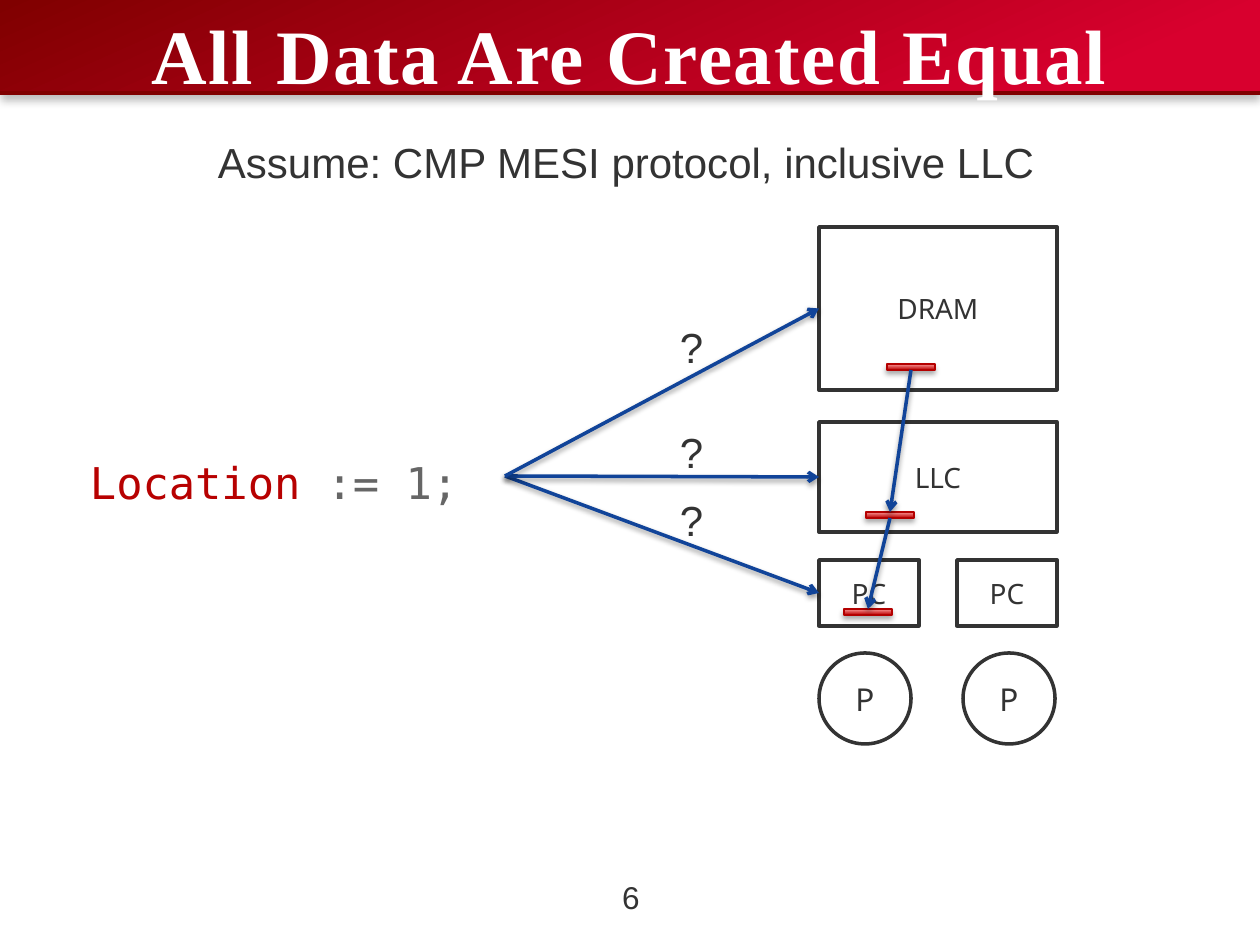
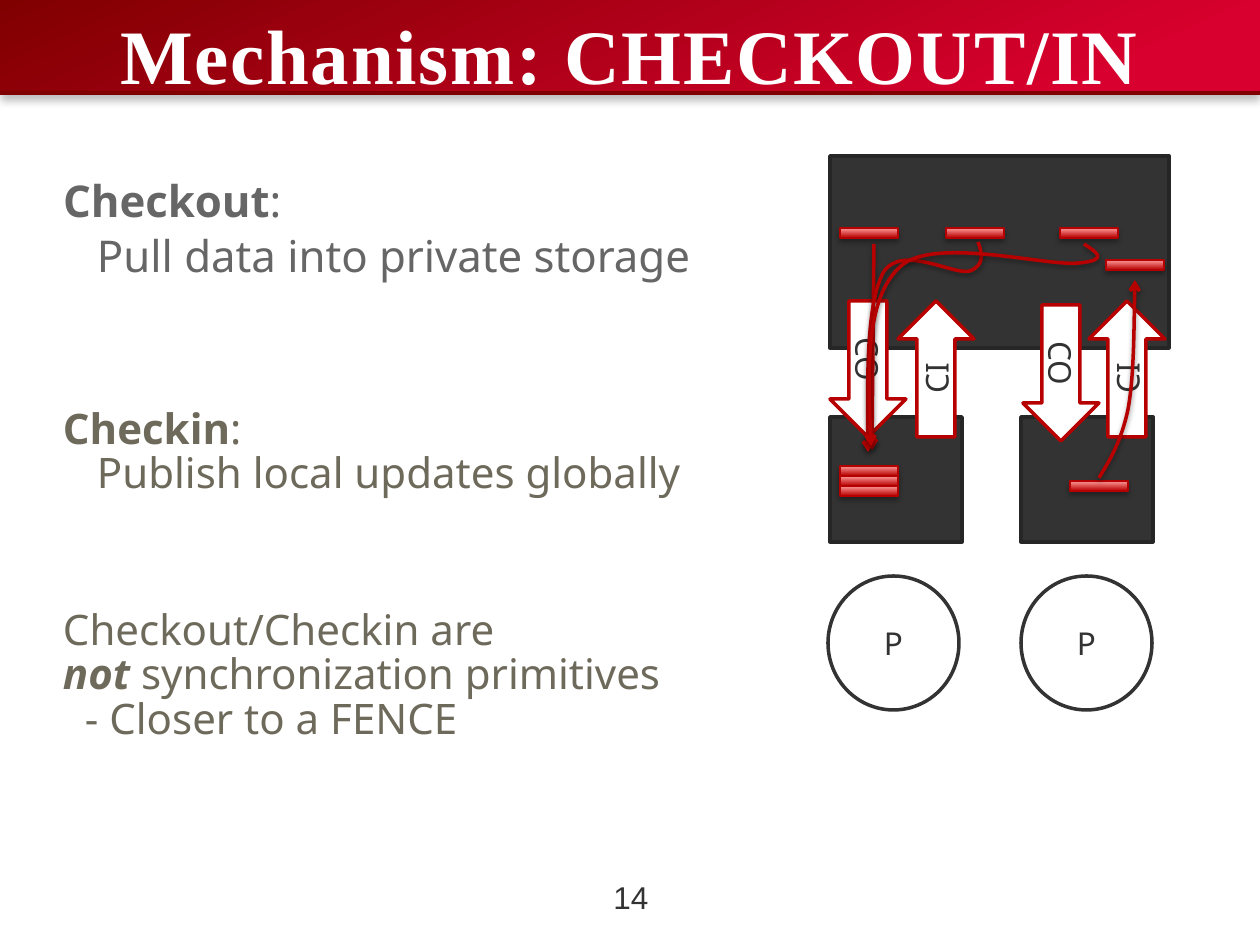
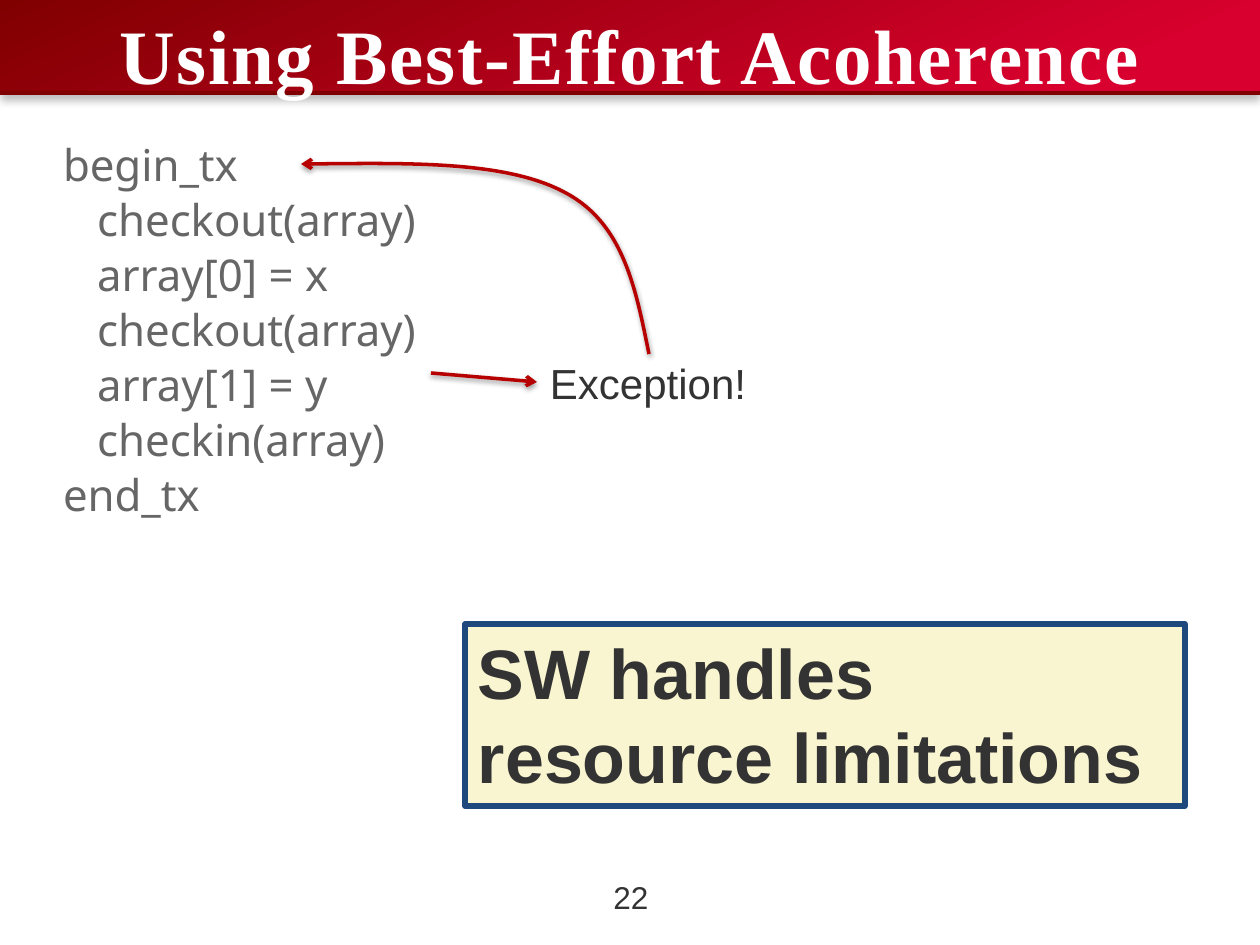
from pptx import Presentation
from pptx import util as u
from pptx.dml.color import RGBColor
from pptx.enum import shapes, text
from pptx.oxml.ns import qn
from lxml import etree

# Colours
WHITE = RGBColor(0xFF, 0xFF, 0xFF)
INK = RGBColor(0x33, 0x33, 0x33)
DARK_EDGE = RGBColor(0x26, 0x26, 0x26)
GREY = RGBColor(0x66, 0x66, 0x66)
OLIVE = RGBColor(0x6E, 0x6A, 0x5B)
RED = RGBColor(0xB7, 0x01, 0x01)
BLUE = RGBColor(0x11, 0x44, 0x99)
MAROON = RGBColor(0x80, 0x00, 0x00)
CRIMSON = RGBColor(0xD8, 0x00, 0x2E)
LINE_DARK = RGBColor(0xB8, 0x00, 0x00)
LINE_LIGHT = RGBColor(0xFF, 0x9C, 0x9C)
LINE_EDGE = RGBColor(0xB4, 0x00, 0x00)
CREAM = RGBColor(0xF9, 0xF5, 0xD0)
NAVY = RGBColor(0x1F, 0x49, 0x7D)

SANS, MONO, ARIAL, SERIF = "Noto Sans", "DejaVu Sans Mono", "Arial", "Times New Roman"
RECT, OVAL = shapes.MSO_SHAPE.RECTANGLE, shapes.MSO_SHAPE.OVAL
DOWN, UP = shapes.MSO_SHAPE.DOWN_ARROW, shapes.MSO_SHAPE.UP_ARROW
CENTER, LEFT = text.PP_ALIGN.CENTER, text.PP_ALIGN.LEFT
TOP, MIDDLE = text.MSO_ANCHOR.TOP, text.MSO_ANCHOR.MIDDLE
SIDE_TOP, SIDE_LEFT, SIDE_BOTTOM = 0, 1, 2

PX_PER_INCH = 126
PAGE_WIDTH, PAGE_HEIGHT = 1260, 945
BAND_HEIGHT = 93
TIGHT = 0.88  # line spacing of the sans text


def px(length):
    return u.Emu(round(length * 914400 / PX_PER_INCH))


def place(box, left, top, width, height):
    box.left, box.top, box.width, box.height = map(px, (left, top, width, height))


class SlideMaker:
    """Holds the deck's style and the current slide."""

    def __init__(self):
        self.deck = Presentation()
        self.deck.slide_width, self.deck.slide_height = px(PAGE_WIDTH), px(PAGE_HEIGHT)
        self.page = None

    def start(self, title, number):
        self.page = self.deck.slides.add_slide(self.deck.slide_layouts[1])
        # Band with its lower rule, behind the title
        band = self.shape(RECT, 0, 0, PAGE_WIDTH, BAND_HEIGHT, None, None)
        self.gradient(band, 294, (0, MAROON), (0.87, CRIMSON))
        self.shadow(band, 25, 5, 3.8)
        self.line((0, BAND_HEIGHT), (PAGE_WIDTH, BAND_HEIGHT), MAROON, arrow=False)
        self.label(str(number), 581, 872, 100, 50, size=18, align=CENTER)
        # Title
        heading = self.page.shapes.title
        self.page.shapes._spTree.append(heading._element)
        place(heading, 0, 0, PAGE_WIDTH, 92)
        self.set_lines(heading.text_frame, [title], SERIF, 44, WHITE, CENTER, TOP,
                       insets=(13, 8, 13, 0), bold=True)
        for span in heading.text_frame.paragraphs[0].runs:
            span.font._element.set("spc", "100")

    def set_lines(self, frame, lines, font, size, color, align=LEFT, anchor=TOP,
                  insets=(13, 6, 13, 6), spacing=1.0, before=0, bold=False):
        """A line is a string, a list of (text, font settings) or (indent, line)."""
        frame.word_wrap = True
        frame.auto_size = text.MSO_AUTO_SIZE.NONE
        frame.vertical_anchor = anchor
        (frame.margin_left, frame.margin_top,
         frame.margin_right, frame.margin_bottom) = map(px, insets)
        for index, line in enumerate(lines):
            indent, content = line if isinstance(line, tuple) else (0, line)
            para = frame.add_paragraph() if index else frame.paragraphs[0]
            para.alignment = align
            para.line_spacing = spacing
            para.space_before = u.Pt(before if index else 0)
            properties = para._p.get_or_add_pPr()
            properties.set("marL", str(px(indent)))
            properties.set("indent", "0")
            etree.SubElement(properties, qn("a:buNone"))
            spans = [(content, {})] if isinstance(content, str) else content
            for words, settings in spans:
                span = para.add_run()
                span.text = words
                span.font.name, span.font.size = font, u.Pt(size)
                span.font.bold = settings.get("bold", bold)
                span.font.italic = settings.get("italic", False)
                span.font.color.rgb = settings.get("color", color)

    def body(self, lines, left, top, width, height, font=SANS, color=GREY, spacing=TIGHT):
        box = self.page.placeholders[1]
        place(box, left, top, width, height)
        self.set_lines(box.text_frame, lines, font, 25, color, spacing=spacing, before=5)

    def label(self, words, left, top, width, height, size=24, align=LEFT):
        self.paragraphs([words], left, top, width, height, ARIAL, size, INK, align)

    def paragraphs(self, lines, left, top, width, height, font=SANS, size=24,
                   color=OLIVE, align=LEFT, spacing=1.0):
        box = self.page.shapes.add_textbox(*map(px, (left, top, width, height)))
        self.set_lines(box.text_frame, lines, font, size, color, align, spacing=spacing)

    def shape(self, kind, left, top, width, height, fill=WHITE, edge=INK, weight=2):
        box = self.page.shapes.add_shape(kind, *map(px, (left, top, width, height)))
        box.shadow.inherit = False
        if fill is not None:
            box.fill.solid()
            box.fill.fore_color.rgb = fill
        if edge is None:
            box.line.fill.background()
        else:
            box.line.color.rgb = edge
            box.line.width = u.Pt(weight)
        return box

    def node(self, words, kind, left, top, width, height, size=18, edge=INK, turn=None):
        box = self.shape(kind, left, top, width, height, edge=edge)
        self.set_lines(box.text_frame, [words], SANS, size, INK, CENTER, MIDDLE, (0, 0, 0, 0))
        if turn:
            box.text_frame._txBody.bodyPr.set("vert", turn)
        return box

    def cache_line(self, left, top, width, height):
        box = self.shape(RECT, left, top, width, height, None, LINE_EDGE, 0.75)
        self.gradient(box, 90, (0, LINE_DARK), (1, LINE_LIGHT))
        self.shadow(box, 35, 3.1, 1.8)
        return box

    def gradient(self, box, angle, *stops):
        box.fill.gradient()
        box.fill.gradient_angle = angle
        for stop, (position, color) in zip(box.fill.gradient_stops, stops):
            stop.position, stop.color.rgb = position, color

    def shadow(self, item, opacity, blur, distance):
        effects = item._element.spPr.get_or_add_effectLst()
        outer = etree.SubElement(effects, qn("a:outerShdw"), blurRad=str(u.Pt(blur)),
                                 dist=str(u.Pt(distance)), dir="5400000", rotWithShape="0")
        color = etree.SubElement(outer, qn("a:srgbClr"), val="000000")
        etree.SubElement(color, qn("a:alpha"), val=str(opacity * 1000))

    def stroke(self, item, color, arrow=True):
        item.line.color.rgb = color
        item.line.width = u.Pt(2)
        properties = item._element.spPr
        properties.get_or_add_effectLst()
        if arrow:
            etree.SubElement(properties.get_or_add_ln(), qn("a:tailEnd"), type="arrow")
            self.shadow(item, 38, 3.1, 1.6)

    def line(self, start, end, color, arrow=True):
        """Each end is a point, or a (shape, side) pair to join."""
        joined = [hasattr(point[0], "shape_id") for point in (start, end)]
        points = [(0, 0) if join else point for join, point in zip(joined, (start, end))]
        connector = self.page.shapes.add_connector(
            shapes.MSO_CONNECTOR.STRAIGHT, *map(px, points[0] + points[1]))
        if joined[0]:
            connector.begin_connect(*start)
        if joined[1]:
            connector.end_connect(*end)
        self.stroke(connector, color, arrow)

    def curve(self, start, *points):
        """Points come in threes: two controls and an end."""
        builder = self.page.shapes.build_freeform(*map(px, start))
        builder.add_line_segments([tuple(map(px, point)) for point in points], close=False)
        outline = builder.convert_to_shape()
        route = outline._element.find(".//" + qn("a:path"))
        segments = route.findall(qn("a:lnTo"))
        for first in range(0, len(segments), 3):
            bend = etree.SubElement(route, qn("a:cubicBezTo"))
            for segment in segments[first:first + 3]:
                bend.append(segment[0])
                route.remove(segment)
        outline.shadow.inherit = False
        outline.fill.background()
        self.stroke(outline, RED)


def data_slide(maker):
    maker.start("All Data Are Created Equal", 6)
    maker.body([[("Location", {"color": RED}), (" := 1;", {})]],
               77, 450, 428, 55, font=MONO, spacing=1.0)
    # Memory hierarchy
    left = 819
    private = [maker.node("PC", RECT, x, 560, 100, 66, 16) for x in (left, 957)]
    dram = maker.node("DRAM", RECT, left, 227, 238, 163, 16)
    llc = maker.node("LLC", RECT, left, 422, 238, 110, 16)
    for x in (left, 963):
        maker.node("P", OVAL, x, 653, 92, 91)
    # Where does the location live?
    for target in (private[0], llc, dram):
        maker.line((505, 476), (target, SIDE_LEFT), BLUE)
    for top in (316, 421, 489):
        maker.label("?", 667, top, 49, 63)
    maker.label("Assume: CMP MESI protocol, inclusive LLC", 205, 131, 859, 63)
    # The same line at each level
    copies = [maker.cache_line(x, y, 48, 6) for x, y in ((887, 364), (866, 512), (844, 609))]
    for upper, lower in zip(copies, copies[1:]):
        maker.line((upper, SIDE_BOTTOM), (lower, SIDE_TOP), BLUE)


def mechanism_slide(maker):
    maker.start("Mechanism: CHECKOUT/IN", 14)
    bold, indent = {"bold": True}, 34
    maker.body([[("Checkout", bold), (":", {})], (indent, "Pull data into private storage")],
               50, 175, 709, 145)
    # Shared and private storage
    for x, y, width, height in ((830, 417, 132, 125), (1021, 417, 132, 125),
                                (830, 156, 339, 192)):
        maker.shape(RECT, x, y, width, height, INK, DARK_EDGE)
    for x in (828, 1021):
        maker.node("P", OVAL, x, 576, 131, 134)
    # Checkin and checkout arrows
    for x in (898, 1089):
        maker.node("CI", UP, x, 301, 76, 136, edge=RED, turn="vert270")
    for x, y in ((830, 301), (1023, 305)):
        maker.node("CO", DOWN, x, y, 76, 136, edge=RED, turn="vert")
    # Data moving between the levels
    shared = [(x, 228) for x in (840, 946, 1060)]
    stacked = [(840, 466 + 10 * row) for row in range(3)]
    for x, y in shared + stacked:
        maker.cache_line(x, y, 58, 10)
    maker.line((874, 244), (872, 450), RED)
    maker.curve((978, 242), (982, 253), (985, 265), (970, 271), (954, 276), (901, 243),
                (883, 273), (867, 304), (867, 378), (868, 452))
    maker.curve((1084, 244), (1096, 252), (1110, 260), (1079, 263), (1048, 267), (935, 236),
                (901, 266), (866, 297), (868, 372), (871, 446))
    for x, y in ((1106, 260), (1070, 481)):
        maker.cache_line(x, y, 58, 10)
    maker.curve((1099, 478), (1110, 460), (1121, 442), (1128, 410),
                (1134, 377), (1134, 328), (1135, 280))
    # Explanations
    maker.paragraphs([[("Checkin", bold), (":", {})],
                      (indent, "Publish local updates globally")],
                     50, 403, 690, 165, spacing=TIGHT)
    maker.paragraphs(["Checkout/Checkin are",
                      [("not ", {"bold": True, "italic": True}),
                       ("synchronization primitives", {})],
                      (22, "- Closer to a FENCE")],
                     50, 604, 656, 217, spacing=TIGHT)


def best_effort_slide(maker):
    maker.start("Using Best-Effort Acoherence", 22)
    maker.body(["begin_tx", "   checkout(array)", "   array[0] = x", "   checkout(array)",
                "   array[1] = y", "   checkin(array)", "end_tx"], 50, 139, 457, 709)
    # Exception path
    maker.label("Exception!", 537, 352, 231, 63)
    maker.line((431, 373), (537, 382), RED)
    maker.curve((649, 354), (636, 290), (624, 224), (566, 193),
                (508, 161), (404, 163), (301, 164))
    # Takeaway
    takeaway = maker.shape(RECT, 465, 624, 720, 182, CREAM, NAVY, 3)
    maker.set_lines(takeaway.text_frame, ["SW handles resource limitations"],
                    ARIAL, 40, INK, bold=True)


def main():
    maker = SlideMaker()
    for build in (data_slide, mechanism_slide, best_effort_slide):
        build(maker)
    maker.deck.save("out.pptx")


if __name__ == "__main__":
    main()
